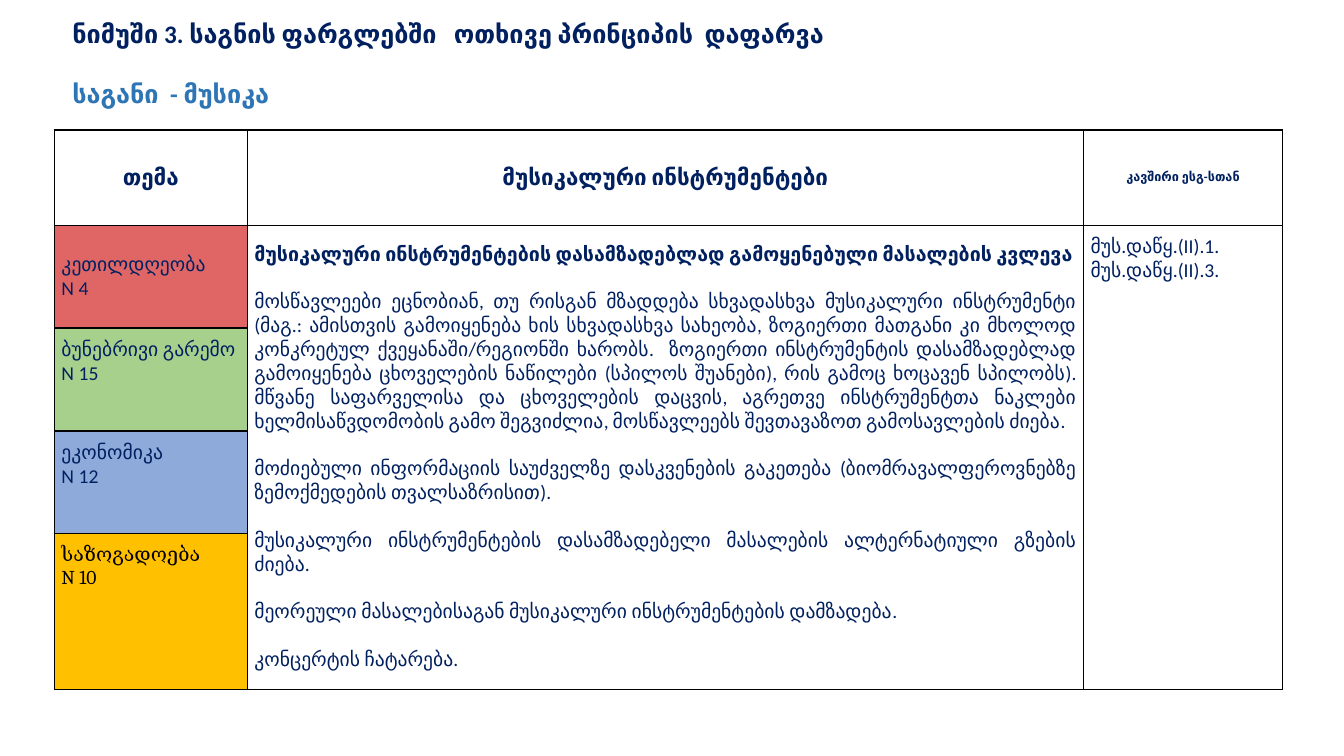
from lxml import etree
from pptx import Presentation
from pptx import util as u
from pptx.dml import color
from pptx.enum import text
from pptx.oxml import ns

COLORS = {
    "navy": "002060", "blue": "2E75B5", "black": "000000", "red": "E06666",
    "green": "A8D08D", "periwinkle": "8EAADB", "amber": "FFC000",
}
LEFT, CENTER, JUSTIFY = text.PP_ALIGN.LEFT, text.PP_ALIGN.CENTER, text.PP_ALIGN.JUSTIFY
TOP, MIDDLE = text.MSO_ANCHOR.TOP, text.MSO_ANCHOR.MIDDLE

HEADINGS = [("თემა", 16), ("მუსიკალური ინსტრუმენტები", 16), ("კავშირი ესგ-სთან", 9)]
THEMES = [
    (["კეთილდღეობა", "N 4"], "red", {"align": LEFT}, MIDDLE),
    (["ბუნებრივი გარემო", "N 15"], "green", {}, TOP),
    (["ეკონომიკა", "N 12"], "periwinkle", {}, TOP),
    (["საზოგადოება", "N 10"], "amber", {"font": "Cambria", "fill": "black"}, TOP),
]
RESEARCH_TITLE = "მუსიკალური ინსტრუმენტების დასამზადებლად გამოყენებული მასალების კვლევა"
ACTIVITIES = [
    "მოსწავლეები ეცნობიან, თუ რისგან მზადდება სხვადასხვა მუსიკალური ინსტრუმენტი "
    "(მაგ.: ამისთვის გამოიყენება ხის სხვადასხვა სახეობა, ზოგიერთი მათგანი კი მხოლოდ "
    "კონკრეტულ ქვეყანაში/რეგიონში ხარობს.  ზოგიერთი ინსტრუმენტის დასამზადებლად "
    "გამოიყენება ცხოველების ნაწილები (სპილოს შუანები), რის გამოც ხოცავენ სპილობს). "
    "მწვანე საფარველისა და ცხოველების დაცვის, აგრეთვე ინსტრუმენტთა ნაკლები "
    "ხელმისაწვდომობის გამო შეგვიძლია, მოსწავლეებს შევთავაზოთ გამოსავლების ძიება.",
    "მოძიებული ინფორმაციის საუძველზე დასკვენების გაკეთება (ბიომრავალფეროვნებზე "
    "ზემოქმედების თვალსაზრისით).",
    "მუსიკალური ინსტრუმენტების დასამზადებელი მასალების ალტერნატიული გზების ძიება.",
    "მეორეული მასალებისაგან მუსიკალური ინსტრუმენტების დამზადება.",
    "კონცერტის ჩატარება.",
]
STANDARDS = ["მუს.დაწყ.(II).1.", "მუს.დაწყ.(II).3."]


def add_text(frame, content, size=14, bold=False, fill="navy", font="Calibri", align=LEFT, before=0):
    """Write one formatted paragraph, reusing the first one while it is empty."""
    first = frame.paragraphs[0]
    paragraph = frame.add_paragraph() if first.runs else first
    paragraph.alignment = align
    paragraph.space_before = u.Pt(before)
    run = paragraph.add_run()
    run.text = content
    run.font.size, run.font.bold, run.font.name = u.Pt(size), bold, font
    run.font.color.rgb = color.RGBColor.from_string(COLORS[fill])


def style_cell(cell, fill=None, anchor=TOP):
    """Set the margins, anchor, fill and black borders of a cell."""
    cell.margin_left = cell.margin_right = u.Inches(0.07)
    cell.margin_top = cell.margin_bottom = u.Inches(0.1)
    cell.vertical_anchor = anchor
    if fill:
        cell.fill.solid()
        cell.fill.fore_color.rgb = color.RGBColor.from_string(COLORS[fill])
    else:
        cell.fill.background()
    properties = cell._tc.get_or_add_tcPr()
    for index, side in enumerate(("lnL", "lnR", "lnT", "lnB")):
        line = etree.Element(ns.qn(f"a:{side}"), w=str(u.Pt(1)))
        solid = etree.SubElement(line, ns.qn("a:solidFill"))
        etree.SubElement(solid, ns.qn("a:srgbClr"), val=COLORS["black"])
        properties.insert(index, line)


def add_title(slide, left, top, width, height):
    """Add the sample heading with the subject below it."""
    shape = slide.shapes.add_textbox(*map(u.Inches, (left, top, width, height)))
    frame = shape.text_frame
    frame.word_wrap = True
    frame.vertical_anchor = MIDDLE
    frame.margin_top, frame.margin_bottom = u.Inches(0.03), u.Inches(0.3)
    add_text(frame, "ნიმუში 3. საგნის ფარგლებში   ოთხივე პრინციპის  დაფარვა", size=18, bold=True)
    add_text(frame, "საგანი  - მუსიკა", size=18, bold=True, fill="blue", before=21.6)


def add_theme_table(slide, left, top, width, height):
    """Add the table of themes, activities and linked standards."""
    box = map(u.Inches, (left, top, width, height))
    table = slide.shapes.add_table(len(THEMES) + 1, len(HEADINGS), *box).table
    table.first_row = table.horz_banding = False
    for column, share in zip(table.columns, (0.157, 0.681, 0.162)):
        column.width = u.Inches(width * share)
    for row, share in zip(table.rows, (0.17, 0.184, 0.184, 0.184, 0.278)):
        row.height = u.Inches(height * share)
    for column in (1, 2):
        table.cell(1, column).merge(table.cell(len(THEMES), column))
        for row in range(1, len(THEMES) + 1):
            style_cell(table.cell(row, column), anchor=MIDDLE if column == 1 else TOP)
    for column, (heading, size) in enumerate(HEADINGS):
        cell = table.cell(0, column)
        style_cell(cell, anchor=MIDDLE)
        add_text(cell.text_frame, heading, size=size, bold=True, align=CENTER)
    for row, (lines, fill, style, anchor) in enumerate(THEMES, 1):
        cell = table.cell(row, 0)
        style_cell(cell, fill, anchor)
        for line in lines:
            add_text(cell.text_frame, line, **{"align": JUSTIFY, **style})
    activities = table.cell(1, 1).text_frame
    add_text(activities, RESEARCH_TITLE, bold=True, align=JUSTIFY)
    for activity in ACTIVITIES:
        add_text(activities, activity, align=JUSTIFY, before=17)
    for standard in STANDARDS:
        add_text(table.cell(1, 2).text_frame, standard)


def main():
    """Build and save the presentation."""
    presentation = Presentation()
    presentation.slide_width, presentation.slide_height = u.Inches(13.33), u.Inches(7.5)
    slide = presentation.slides.add_slide(presentation.slide_layouts[6])
    add_theme_table(slide, 0.54, 1.29, 12.18, 5.55)
    add_title(slide, 0.62, 0.57, 12.71, 0.39)
    presentation.save("out.pptx")


if __name__ == "__main__":
    main()
